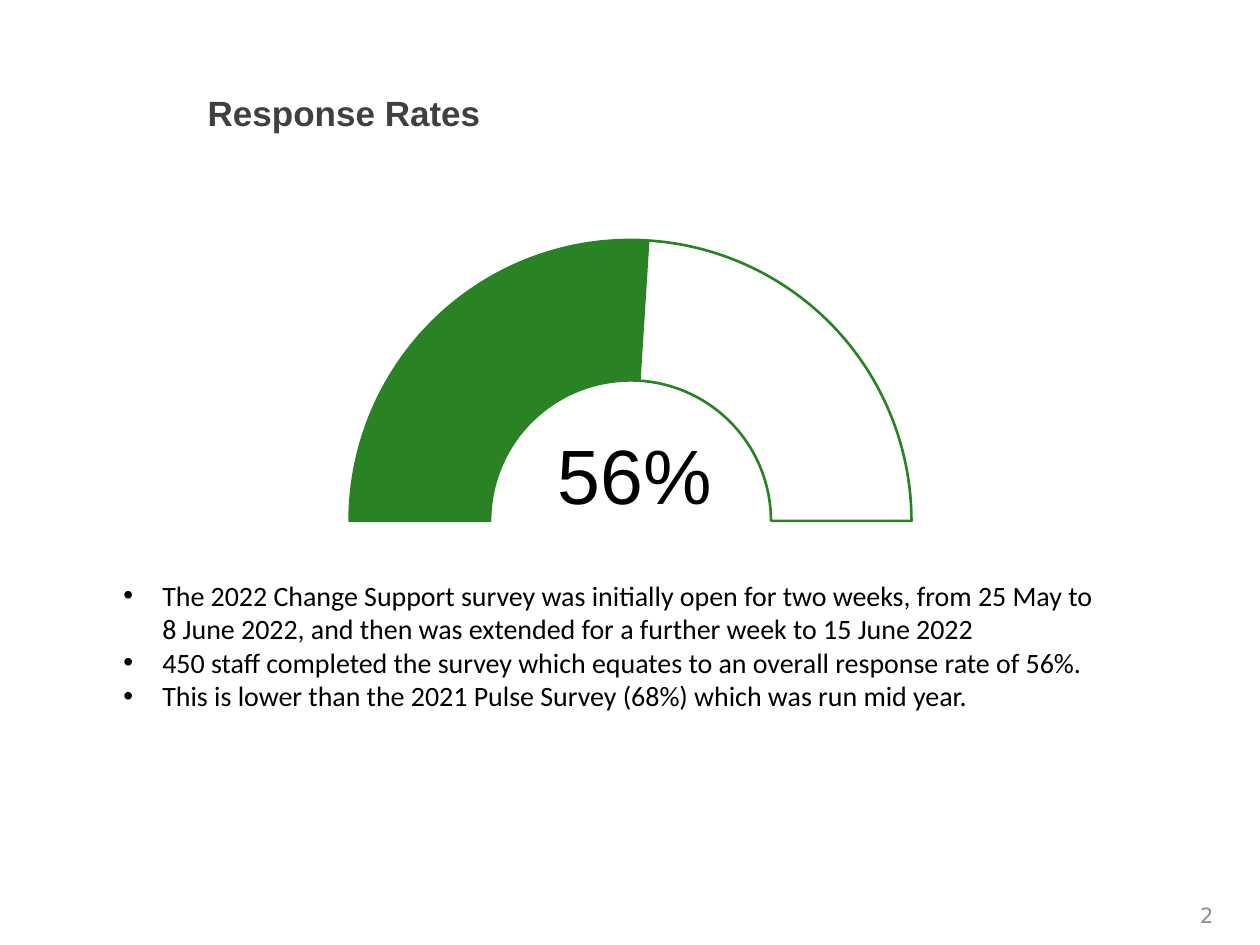
from dataclasses import dataclass

from lxml import etree
from pptx import Presentation
from pptx.chart.data import CategoryChartData
from pptx.dml.color import RGBColor as RGB
from pptx.enum.chart import XL_CHART_TYPE as Kind
from pptx.enum.text import MSO_ANCHOR as Anchor, PP_ALIGN as Align
from pptx.oxml import parse_xml
from pptx.oxml.ns import nsdecls, qn
from pptx.util import Inches, Pt


@dataclass(frozen=True)
class Theme:
    green: RGB = RGB(0x29, 0x82, 0x24)
    white: RGB = RGB(0xFF, 0xFF, 0xFF)
    black: RGB = RGB(0, 0, 0)
    dark: RGB = RGB(0x40, 0x40, 0x40)
    gray: RGB = RGB(0x8C, 0x8C, 0x8C)
    head: str = "Arial"
    body: str = "Calibri"
    num: str = "DejaVu Sans"
    title: Pt = Pt(20)
    rate: Pt = Pt(44)
    text: Pt = Pt(16)
    small: Pt = Pt(12)
    chart: Pt = Pt(10)


THEME = Theme()
POINTS = [
    "The 2022 Change Support survey was initially open for two weeks, "
    "from 25 May to\n8 June 2022, and then was extended for a further week "
    "to 15 June 2022",
    "450 staff completed the survey which equates to an overall response "
    "rate of 56%.",
    "This is lower than the 2021 Pulse Survey (68%) which was run mid year.",
]


def add_text(slide, box, lines, face, size, color, bold=False,
             align=Align.LEFT, anchor=Anchor.TOP, bullet=False):
    frame = slide.shapes.add_textbox(*map(Inches, box)).text_frame
    frame.word_wrap = True
    frame.vertical_anchor = anchor
    for i, line in enumerate(lines):
        para = frame.paragraphs[0] if i == 0 else frame.add_paragraph()
        para.text = line
        para.alignment = align
        if bullet:
            add_bullet(para)
        for run in para.runs:
            font = run.font
            font.name, font.size, font.bold = face, size, bold
            font.color.rgb = color


def add_bullet(para):
    props = para._p.get_or_add_pPr()
    indent = Inches(0.31)
    props.set("marL", str(indent))
    props.set("indent", str(-indent))
    etree.SubElement(props, qn("a:buFont")).set("typeface", "Arial")
    etree.SubElement(props, qn("a:buChar")).set("char", "•")


def add_gauge(slide, box):
    """Draw a half ring: a doughnut whose lower half is left unpainted."""
    data = CategoryChartData()
    data.categories = ["1", "2", "3", "4"]
    data.add_series("Series 1", (50, 26, 0, 24))
    chart = slide.shapes.add_chart(
        Kind.DOUGHNUT, *map(Inches, box), data).chart
    chart.has_legend = chart.has_title = False
    chart.font.name, chart.font.size = THEME.body, THEME.chart
    chart.font.color.rgb = THEME.black

    plot = chart.plots[0]
    plot.vary_by_categories = False
    ring = plot._element
    ring.find(qn("c:firstSliceAng")).set("val", "90")
    ring.find(qn("c:holeSize")).set("val", "60")
    fills = (None, THEME.green, THEME.white, THEME.white)
    for i, color in enumerate(fills):
        part = plot.series[0].points[i].format
        if color is None:
            part.fill.background()
            part.line.fill.background()
            continue
        part.fill.solid()
        part.fill.fore_color.rgb = color
        part.line.color.rgb = THEME.green
        part.line.width = Pt(1.5)
    center_ring(chart, box, 4.46)


def center_ring(chart, box, size):
    wide, high = size / box[2], size / box[3]
    spots = {"x": (1 - wide) / 2, "y": (1 - high) / 2, "w": wide, "h": high}
    rules = '<c:layoutTarget val="inner"/>'
    rules += "".join(f'<c:{k}Mode val="edge"/>' for k in "xy")
    rules += "".join(f'<c:{k} val="{v:.4f}"/>' for k, v in spots.items())
    area = chart._chartSpace.chart.plotArea
    old = area.find(qn("c:layout"))
    if old is not None:
        area.remove(old)
    area.insert(0, parse_xml(
        f'<c:layout {nsdecls("c")}><c:manualLayout>{rules}'
        '</c:manualLayout></c:layout>'))


def main():
    deck = Presentation()
    deck.slide_width, deck.slide_height = Inches(10), Inches(7.5)
    slide = deck.slides.add_slide(deck.slide_layouts[6])
    add_text(slide, (1.55, 0.61, 8.24, 0.56), ["Response Rates"], THEME.head,
             THEME.title, THEME.dark, bold=True, anchor=Anchor.MIDDLE)
    add_text(slide, (6.73, 7.11, 3, 0.3), ["2"], THEME.num, THEME.small,
             THEME.gray, align=Align.RIGHT, anchor=Anchor.MIDDLE)
    add_gauge(slide, (0.88, 1.77, 8.25, 4.73))
    add_text(slide, (4.33, 3.34, 2.15, 0.84), ["56%"], THEME.head,
             THEME.rate, THEME.black)
    add_text(slide, (0.88, 4.54, 8.51, 1.18), POINTS, THEME.body,
             THEME.text, THEME.black, bullet=True)
    deck.save("out.pptx")


if __name__ == "__main__":
    main()
